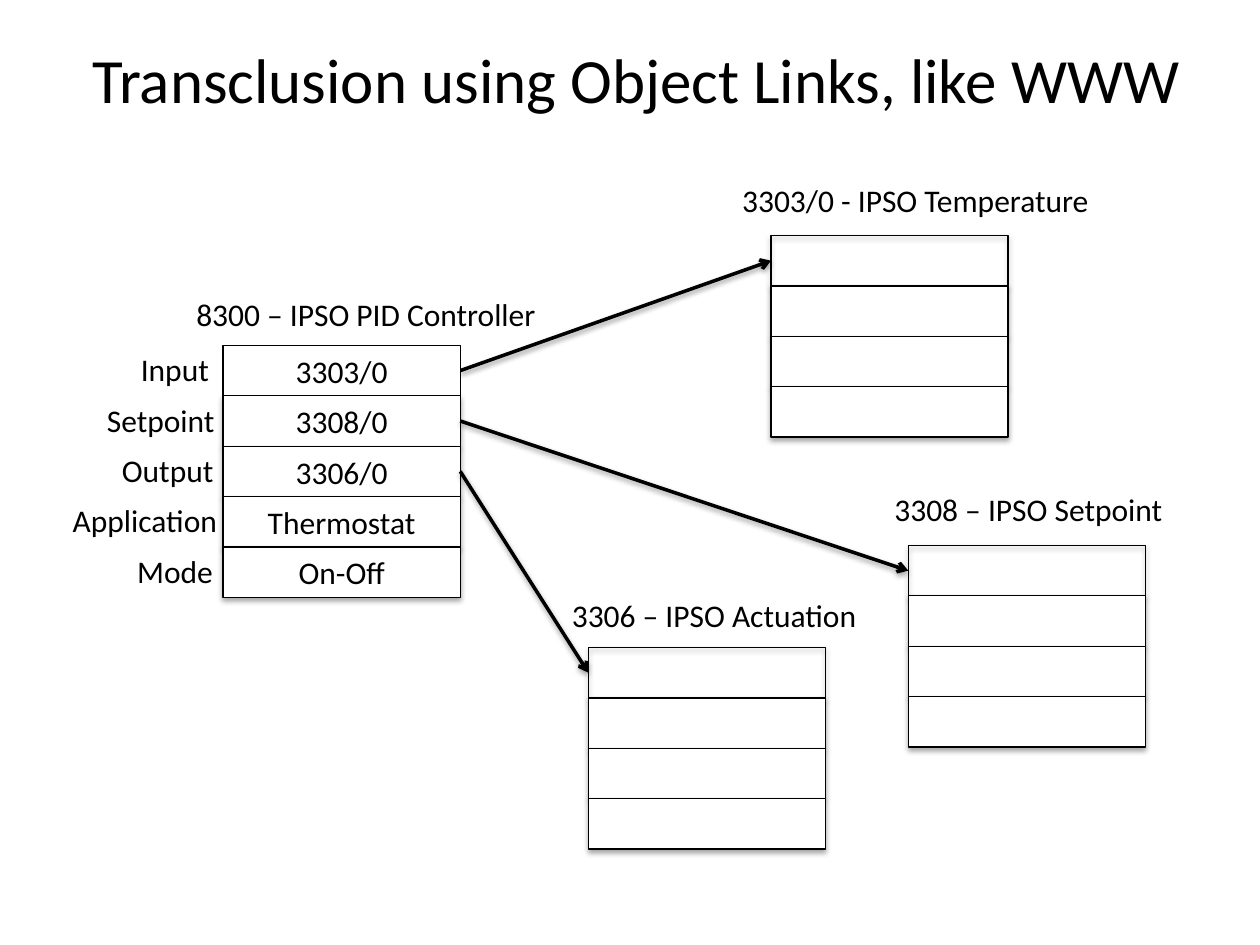
import pptx
import pptx.dml.color
import pptx.enum.shapes
import pptx.enum.text
import pptx.oxml
import pptx.oxml.ns
import pptx.util

Pt = pptx.util.Pt
ALIGN = pptx.enum.text.PP_ALIGN
ANCHOR = pptx.enum.text.MSO_ANCHOR
FIT = pptx.enum.text.MSO_AUTO_SIZE

COLORS = {"ink": "000000", "paper": "FFFFFF"}
CELL_WIDTH, CELL_HEIGHT = 135.5, 28.8
CONTROLLER_LEFT, CONTROLLER_TOP = 127.5, 197.4
LABEL_TOP = 196.6

FIELDS = [
    ("Input", "3303/0", 73.4, 54, ALIGN.LEFT),
    ("Setpoint", "3308/0", 54, 77, ALIGN.LEFT),
    ("Output", "3306/0", 62.6, 67.7, ALIGN.LEFT),
    ("Application", "Thermostat", 33.8, 98, ALIGN.CENTER),
    ("Mode", "On-Off", 71.3, 58.3, ALIGN.LEFT),
]
LINKED_OBJECTS = [
    (440.6, 134.6),
    (519, 311.7),
    (336.2, 370),
]
CAPTIONS = [
    ("8300 – IPSO PID Controller", 105.1, 165, 211),
    ("3303/0 - IPSO Temperature", 417, 100.1, 216.7),
    ("3308 – IPSO Setpoint", 504, 276.5, 169.2),
    ("3306 – IPSO Actuation", 319.7, 337, 179.3),
]


def apply_format(target, values):
    for name, value in values.items():
        setattr(target, name, value)


def color(name):
    return pptx.dml.color.RGBColor.from_string(COLORS[name])


def write(frame, text, size, align):
    paragraph = frame.paragraphs[0]
    paragraph.alignment = align
    run = paragraph.add_run()
    run.text = text
    apply_format(run.font, {"name": "Calibri", "size": Pt(size)})
    run.font.color.rgb = color("ink")


def add_shadow(element, distance, opacity):
    effects = pptx.oxml.parse_xml(
        f'<a:effectLst {pptx.oxml.ns.nsdecls("a")}>'
        f'<a:outerShdw blurRad="{Pt(3.15)}" dist="{Pt(distance)}" dir="5400000" rotWithShape="0">'
        f'<a:srgbClr val="{COLORS["ink"]}"><a:alpha val="{opacity * 1000}"/></a:srgbClr>'
        "</a:outerShdw></a:effectLst>"
    )
    element.spPr.append(effects)


def add_cell(shapes, left, top, text="", filled=True, shadowed=True):
    cell = shapes.add_shape(
        pptx.enum.shapes.MSO_SHAPE.RECTANGLE,
        Pt(left), Pt(top), Pt(CELL_WIDTH), Pt(CELL_HEIGHT),
    )
    if filled:
        cell.fill.solid()
        cell.fill.fore_color.rgb = color("paper")
    else:
        cell.fill.background()
    cell.line.color.rgb = color("ink")
    cell.line.width = Pt(0.75)
    if shadowed:
        add_shadow(cell._element, 1.8, 35)
    else:
        cell.shadow.inherit = False
    if text:
        cell.text_frame.vertical_anchor = ANCHOR.MIDDLE
        write(cell.text_frame, text, 18, ALIGN.CENTER)


def add_linked_object(slide, left, top):
    group = slide.shapes.add_group_shape()
    for row in range(4):
        add_cell(group.shapes, left, top + row * CELL_HEIGHT, filled=row > 0)


def add_link(slide, row, left, top):
    link = slide.shapes.add_connector(
        pptx.enum.shapes.MSO_CONNECTOR.STRAIGHT,
        Pt(CONTROLLER_LEFT + CELL_WIDTH),
        Pt(CONTROLLER_TOP + (row + 0.5) * CELL_HEIGHT),
        Pt(left),
        Pt(top + CELL_HEIGHT / 2),
    )
    link.line.color.rgb = color("ink")
    link.line.width = Pt(2)
    link.line._get_or_add_ln().append(
        pptx.oxml.parse_xml(f'<a:tailEnd {pptx.oxml.ns.nsdecls("a")} type="arrow"/>')
    )
    add_shadow(link._element, 1.57, 38)


def add_label(slide, text, left, top, width, align=ALIGN.LEFT):
    label = slide.shapes.add_textbox(Pt(left), Pt(top), Pt(width), Pt(29))
    apply_format(label.text_frame, {"word_wrap": False, "auto_size": FIT.SHAPE_TO_FIT_TEXT})
    write(label.text_frame, text, 18, align)


def add_title(slide, text):
    title = slide.shapes.add_textbox(Pt(7.2), Pt(0), Pt(712.8), Pt(90))
    apply_format(title.text_frame, {"word_wrap": True, "vertical_anchor": ANCHOR.MIDDLE})
    write(title.text_frame, text, 36, ALIGN.CENTER)


def add_controller_cell(slide, row):
    add_cell(
        slide.shapes, CONTROLLER_LEFT, CONTROLLER_TOP + row * CELL_HEIGHT,
        FIELDS[row][1], shadowed=row > 0,
    )


def main():
    deck = pptx.Presentation()
    apply_format(deck, {"slide_width": Pt(720), "slide_height": Pt(540)})
    slide = deck.slides.add_slide(deck.slide_layouts[6])

    add_title(slide, "Transclusion using Object Links, like WWW")
    for row in range(1, len(FIELDS)):
        add_controller_cell(slide, row)
    for left, top in LINKED_OBJECTS:
        add_linked_object(slide, left, top)
    for row, (left, top) in enumerate(LINKED_OBJECTS):
        add_link(slide, row, left, top)
    for caption in CAPTIONS:
        add_label(slide, *caption)
    for row, (field, _, left, width, align) in enumerate(FIELDS):
        add_label(slide, field, left, LABEL_TOP + row * CELL_HEIGHT, width, align)
    add_controller_cell(slide, 0)

    deck.save("out.pptx")


if __name__ == "__main__":
    main()
